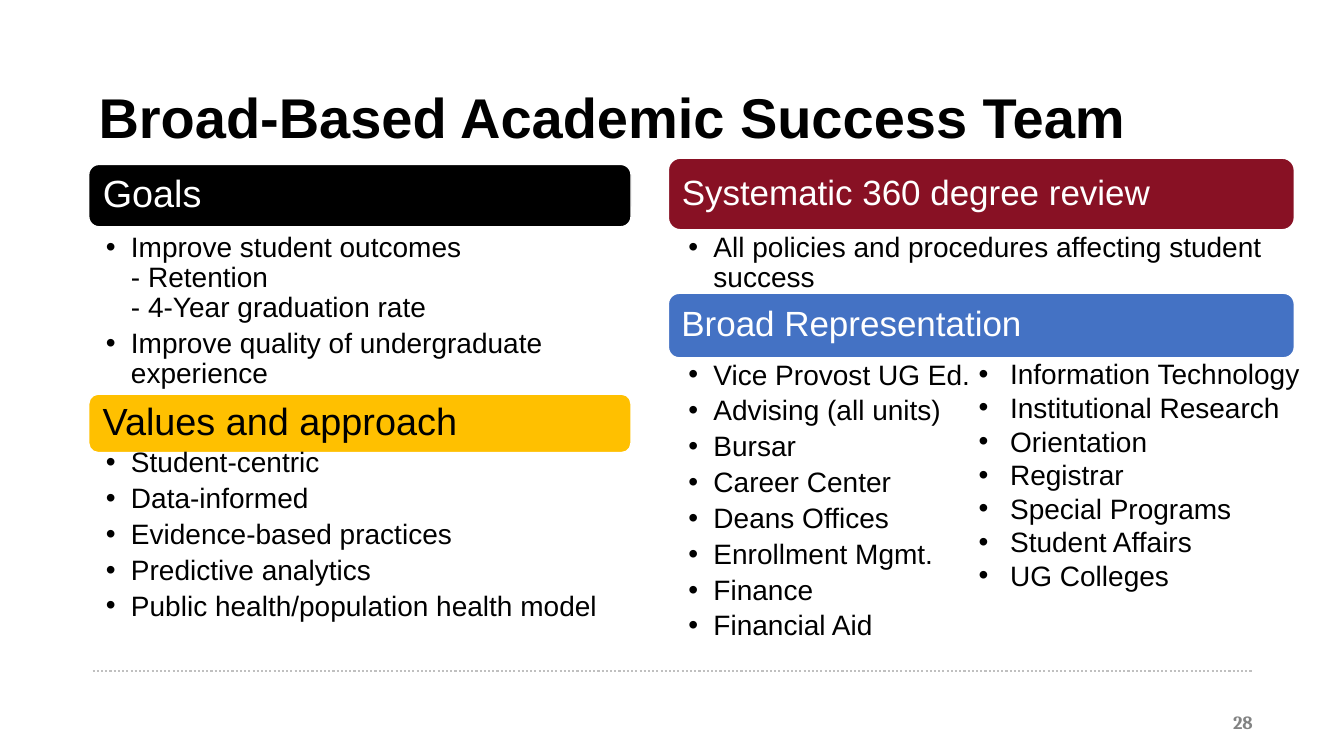
from lxml.etree import SubElement
from pptx import Presentation
from pptx.dml.color import RGBColor
from pptx.enum.dml import MSO_LINE
from pptx.enum.shapes import MSO_CONNECTOR, MSO_SHAPE
from pptx.enum.text import MSO_ANCHOR as ANCHOR, PP_ALIGN as ALIGN
from pptx.oxml.ns import qn
from pptx.util import Pt

COLORS = {
    "black": "000000", "white": "FFFFFF", "gold": "FFC000", "crimson": "881124",
    "blue": "4472C4", "rule": "C0C0C0", "number": "828383",
}
TITLE = "Broad-Based Academic Success Team"
PAGE_NUMBER = "28"
COLUMNS = [
    {"left": 63.36, "width": 387.4, "size": 27, "inset": 7.9, "indent": 12.2, "sections": [
        {"heading": "Goals", "fill": "black", "ink": "white", "bar": (117.4, 44.6),
         "list": (164.2, 112.3), "items": [
             "Improve student outcomes\n- Retention\n- 4-Year graduation rate",
             "Improve quality of undergraduate experience"]},
        {"heading": "Values and approach", "fill": "gold", "ink": "black", "bar": (281.5, 41.8),
         "list": (318.2, 127.4), "items": [
             "Student-centric", "Data-informed", "Evidence-based practices",
             "Predictive analytics", "Public health/population health model"]},
    ]},
    {"left": 477.4, "width": 447.1, "size": 25, "inset": 7.2, "indent": 14.2, "sections": [
        {"heading": "Systematic 360 degree review", "fill": "crimson", "ink": "white",
         "bar": (113, 51.1), "list": (164.2, 45.4), "items": [
             "All policies and procedures affecting student success"]},
        {"heading": "Broad Representation", "fill": "blue", "ink": "white",
         "bar": (209.5, 46.1), "list": (255.6, 202.3), "items": [
             "Vice Provost UG Ed.", "Advising (all units)", "Bursar", "Career Center",
             "Deans Offices", "Enrollment Mgmt.", "Finance", "Financial Aid"]},
    ]},
]
MORE_MEMBERS = [
    "Information Technology", "Institutional Research", "Orientation", "Registrar",
    "Special Programs", "Student Affairs", "UG Colleges",
]


def color(name):
    return RGBColor.from_string(COLORS[name])


def set_frame(frame, insets, anchor=ANCHOR.TOP, wrap=True):
    frame.margin_left, frame.margin_top, frame.margin_right, frame.margin_bottom = map(Pt, insets)
    frame.vertical_anchor = anchor
    frame.word_wrap = wrap


def write(paragraph, text, size, ink, font="Arial", bold=False, align=ALIGN.LEFT, spacing=None):
    paragraph.alignment = align
    if spacing:
        paragraph.line_spacing = spacing
    for index, line in enumerate(text.split("\n")):
        if index:
            paragraph.add_line_break()
        run = paragraph.add_run()
        run.text = line
        run.font.size = Pt(size)
        run.font.name = font
        run.font.bold = bold
        run.font.color.rgb = color(ink)


def add_text(box, insets, anchor=ANCHOR.TOP):
    frame = slide.shapes.add_textbox(*map(Pt, box)).text_frame
    set_frame(frame, insets, anchor)
    return frame.paragraphs[0]


def add_list(box, insets, items, indent, spacing=None, after=0, wrap=True):
    frame = slide.shapes.add_textbox(*map(Pt, box)).text_frame
    set_frame(frame, insets, wrap=wrap)
    for index, item in enumerate(items):
        paragraph = frame.add_paragraph() if index else frame.paragraphs[0]
        properties = paragraph._p.get_or_add_pPr()
        properties.set("marL", str(Pt(indent)))
        properties.set("indent", str(-Pt(indent)))
        SubElement(properties, qn("a:buFont")).set("typeface", "Arial")
        SubElement(properties, qn("a:buChar")).set("char", "•")
        paragraph.space_after = Pt(after)
        write(paragraph, item, 20, "black", spacing=spacing)


def add_bar(column, section):
    top, height = section["bar"]
    bar = slide.shapes.add_shape(
        MSO_SHAPE.ROUNDED_RECTANGLE, Pt(column["left"]), Pt(top), Pt(column["width"]), Pt(height))
    bar.shadow.inherit = False
    bar.fill.solid()
    bar.fill.fore_color.rgb = color(section["fill"])
    bar.line.color.rgb = color("white")
    bar.line.width = Pt(1)
    set_frame(bar.text_frame, [column["inset"]] * 4, ANCHOR.MIDDLE)
    write(bar.text_frame.paragraphs[0], section["heading"], column["size"], section["ink"],
          spacing=0.9)


presentation = Presentation()
presentation.slide_width, presentation.slide_height = Pt(960), Pt(540)
slide = presentation.slides.add_slide(presentation.slide_layouts[6])

rule = slide.shapes.add_connector(MSO_CONNECTOR.STRAIGHT, Pt(66.2), Pt(479.5), Pt(894.2), Pt(479.5))
rule.line.color.rgb = color("rule")
rule.line.width = Pt(1.5)
rule.line.dash_style = MSO_LINE.ROUND_DOT
SubElement(rule._element.spPr, qn("a:effectLst"))

write(add_text((688.3, 501.1, 216, 28.8), (9.4, 5, 9.4, 5), ANCHOR.MIDDLE),
      PAGE_NUMBER, 13.3, "number", "Cambria", True, ALIGN.RIGHT)
write(add_text((63.36, 61.2, 827.3, 55.4), (7.2, 3.6, 7.2, 3.6)),
      TITLE, 40, "black", bold=True, spacing=0.9)

for column in COLUMNS:
    for section in column["sections"]:
        add_bar(column, section)
        top, height = section["list"]
        add_list((column["left"], top, column["width"], height),
                 (column["indent"], 2.2, 11.5, 2.2), section["items"], 18, 0.9, 4)

add_list((691.9, 251.3, 245.5, 200.9), (7.2, 3.6, 7.2, 3.6), MORE_MEMBERS, 22.5, wrap=False)

presentation.save("out.pptx")
